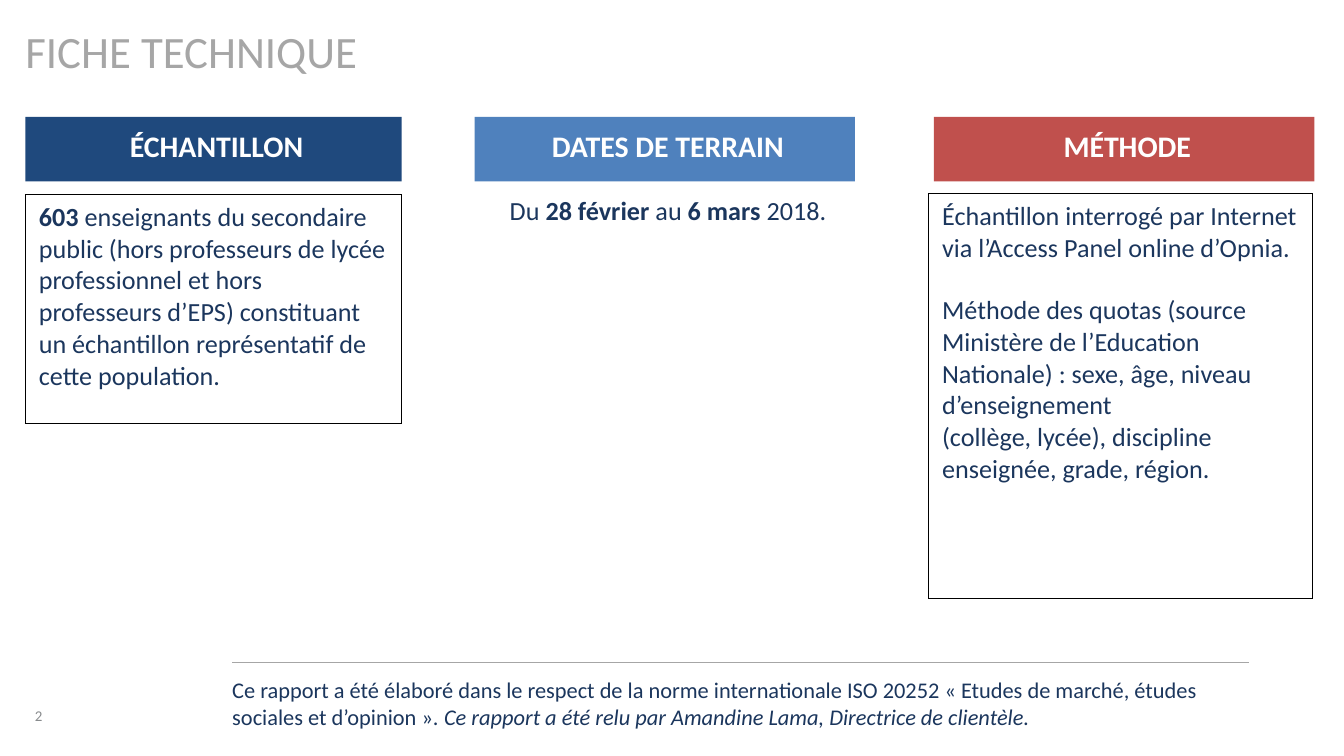
from dataclasses import dataclass

from lxml import etree
from pptx import Presentation
from pptx.dml.color import RGBColor
from pptx.enum.shapes import MSO_CONNECTOR, MSO_SHAPE
from pptx.enum.text import MSO_ANCHOR, MSO_AUTO_SIZE, PP_ALIGN
from pptx.oxml.ns import qn
from pptx.util import Cm, Pt

RECTANGLE = MSO_SHAPE.RECTANGLE
STRAIGHT = MSO_CONNECTOR.STRAIGHT
TOP, MIDDLE, BOTTOM = MSO_ANCHOR.TOP, MSO_ANCHOR.MIDDLE, MSO_ANCHOR.BOTTOM
LEFT, CENTER = PP_ALIGN.LEFT, PP_ALIGN.CENTER

FONT = "Calibri"
NAVY, GREY, WHITE, BLACK = "1B365D", "A6A6A6", "FFFFFF", "000000"
HEADING_TOP, HEADING_HEIGHT = 2.21, 1.22
HEADING_MARGINS = (0.2, 0, 0.08, 0)
NO_MARGINS = (0, 0, 0, 0)


@dataclass
class Box:
    """Position and size in centimetres."""
    left: float
    top: float
    width: float
    height: float

    def lengths(self):
        return Cm(self.left), Cm(self.top), Cm(self.width), Cm(self.height)


@dataclass
class Span:
    text: str
    bold: bool = False
    italic: bool = False


@dataclass
class Heading:
    text: str
    left: float
    width: float
    color: str


@dataclass
class Panel:
    box: Box
    paragraphs: list[list[Span]]
    space_before: tuple[float, ...] = (0,)


HEADINGS = [
    Heading("ÉCHANTILLON", 0.48, 7.11, "1F497D"),
    Heading("DATES DE TERRAIN", 8.97, 7.19, "4F81BD"),
    Heading("MÉTHODE", 17.65, 7.19, "C0504D"),
]

PANELS = [
    Panel(Box(0.48, 3.68, 7.11, 4.32), [[
        Span("603", bold=True),
        Span(" enseignants du secondaire public (hors professeurs de lycée "
             "professionnel et hors professeurs d’EPS) constituant un "
             "échantillon représentatif de cette population."),
    ]]),
    Panel(Box(17.55, 3.66, 7.26, 7.65), [
        [Span("Échantillon interrogé par Internet via l’Access Panel online d’Opnia.")],
        [Span("Méthode des quotas (source Ministère de l’Education Nationale) : "
              "sexe, âge, niveau d’enseignement")],
        [Span("(collège, lycée), discipline enseignée, grade, région.")],
    ], (0, 16.5, 0)),
]

DATES = [Span("Du "), Span("28 février", bold=True), Span(" au "),
         Span("6 mars ", bold=True), Span("2018.")]

NOTE = [
    Span("Ce rapport a été élaboré dans le respect de la norme internationale "
         "ISO 20252 « Etudes de marché, études sociales et d’opinion ». "),
    Span("Ce rapport a été relu par Amandine Lama, Directrice de clientèle.", italic=True),
]


def rgb(color: str) -> RGBColor:
    return RGBColor.from_string(color)


def write_paragraph(paragraph, spans: list[Span], size: float, color: str,
                    alignment=LEFT) -> None:
    paragraph.alignment = alignment
    for span in spans:
        run = paragraph.add_run()
        run.text = span.text
        run.font.name = FONT
        run.font.size = Pt(size)
        run.font.color.rgb = rgb(color)
        run.font.bold = span.bold
        run.font.italic = span.italic


def set_frame(text_frame, margins: tuple[float, ...], anchor, wrap: bool = True) -> None:
    left, top, right, bottom = margins
    text_frame.margin_left, text_frame.margin_top = Cm(left), Cm(top)
    text_frame.margin_right, text_frame.margin_bottom = Cm(right), Cm(bottom)
    text_frame.auto_size = MSO_AUTO_SIZE.NONE
    text_frame.vertical_anchor = anchor
    text_frame.word_wrap = wrap


def add_rectangle(slide, box: Box, fill: str, margins: tuple[float, ...]):
    shape = slide.shapes.add_shape(RECTANGLE, *box.lengths())
    shape.shadow.inherit = False
    shape.fill.solid()
    shape.fill.fore_color.rgb = rgb(fill)
    shape.line.fill.background()
    set_frame(shape.text_frame, margins, MIDDLE)
    return shape.text_frame.paragraphs[0]


def add_text(slide, box: Box, margins: tuple[float, ...], anchor, wrap: bool = True):
    shape = slide.shapes.add_textbox(*box.lengths())
    set_frame(shape.text_frame, margins, anchor, wrap)
    return shape.text_frame.paragraphs[0]


def add_heading(slide, heading: Heading) -> None:
    box = Box(heading.left, HEADING_TOP, heading.width, HEADING_HEIGHT)
    paragraph = add_rectangle(slide, box, heading.color, HEADING_MARGINS)
    paragraph.line_spacing = 0.8
    write_paragraph(paragraph, [Span(heading.text, bold=True)], 16, WHITE, CENTER)


def set_borders(cell, color: str, width: float) -> None:
    properties = cell._tc.get_or_add_tcPr()
    for position, side in enumerate(("lnL", "lnR", "lnT", "lnB")):
        line = etree.Element(qn(f"a:{side}"), w=str(Pt(width)))
        fill = etree.SubElement(line, qn("a:solidFill"))
        etree.SubElement(fill, qn("a:srgbClr"), val=color)
        properties.insert(position, line)


def add_panel(slide, panel: Panel) -> None:
    table = slide.shapes.add_table(1, 1, *panel.box.lengths()).table
    table.first_row = table.horz_banding = False
    cell = table.cell(0, 0)
    cell.fill.background()
    set_borders(cell, BLACK, 0.75)
    text_frame = cell.text_frame
    for index, spans in enumerate(panel.paragraphs):
        paragraph = text_frame.add_paragraph() if index else text_frame.paragraphs[0]
        if panel.space_before[index]:
            paragraph.space_before = Pt(panel.space_before[index])
        write_paragraph(paragraph, spans, 14, NAVY)


def add_rule(slide, left: float, right: float, top: float) -> None:
    rule = slide.shapes.add_connector(STRAIGHT, Cm(left), Cm(top), Cm(right), Cm(top))
    rule.line.color.rgb = rgb(GREY)
    rule.line.width = Pt(0.25)
    etree.SubElement(rule._element.spPr, qn("a:effectLst"))


def main() -> None:
    presentation = Presentation()
    presentation.slide_width, presentation.slide_height = Cm(25.4), Cm(14.29)
    slide = presentation.slides.add_slide(presentation.slide_layouts[5])

    # Title
    title = slide.shapes.title
    title.left, title.top, title.width, title.height = Box(0.48, 0.56, 24.51, 0.91).lengths()
    set_frame(title.text_frame, NO_MARGINS, TOP)
    paragraph = title.text_frame.paragraphs[0]
    paragraph.line_spacing = 0.9
    write_paragraph(paragraph, [Span("FICHE TECHNIQUE")], 24, GREY)

    # Three columns
    for heading in HEADINGS:
        add_heading(slide, heading)
    for panel in PANELS:
        add_panel(slide, panel)
    dates = add_text(slide, Box(8.97, 3.68, 7.19, 0.79), HEADING_MARGINS, TOP)
    write_paragraph(dates, DATES, 14, NAVY, CENTER)

    # Footer: rule, note and slide number
    add_rule(slide, 4.39, 23.6, 12.52)
    note = add_rectangle(slide, Box(4.14, 12.8, 19.56, 0.99), WHITE, (0.25, 0.13, 0.25, 0.13))
    write_paragraph(note, NOTE, 12, NAVY)
    number = add_text(slide, Box(0.66, 13.03, 0.86, 0.66), NO_MARGINS, BOTTOM, wrap=False)
    number.line_spacing = 0.85
    write_paragraph(number, [Span("2")], 8, "888B8D")

    presentation.save("out.pptx")


if __name__ == "__main__":
    main()
